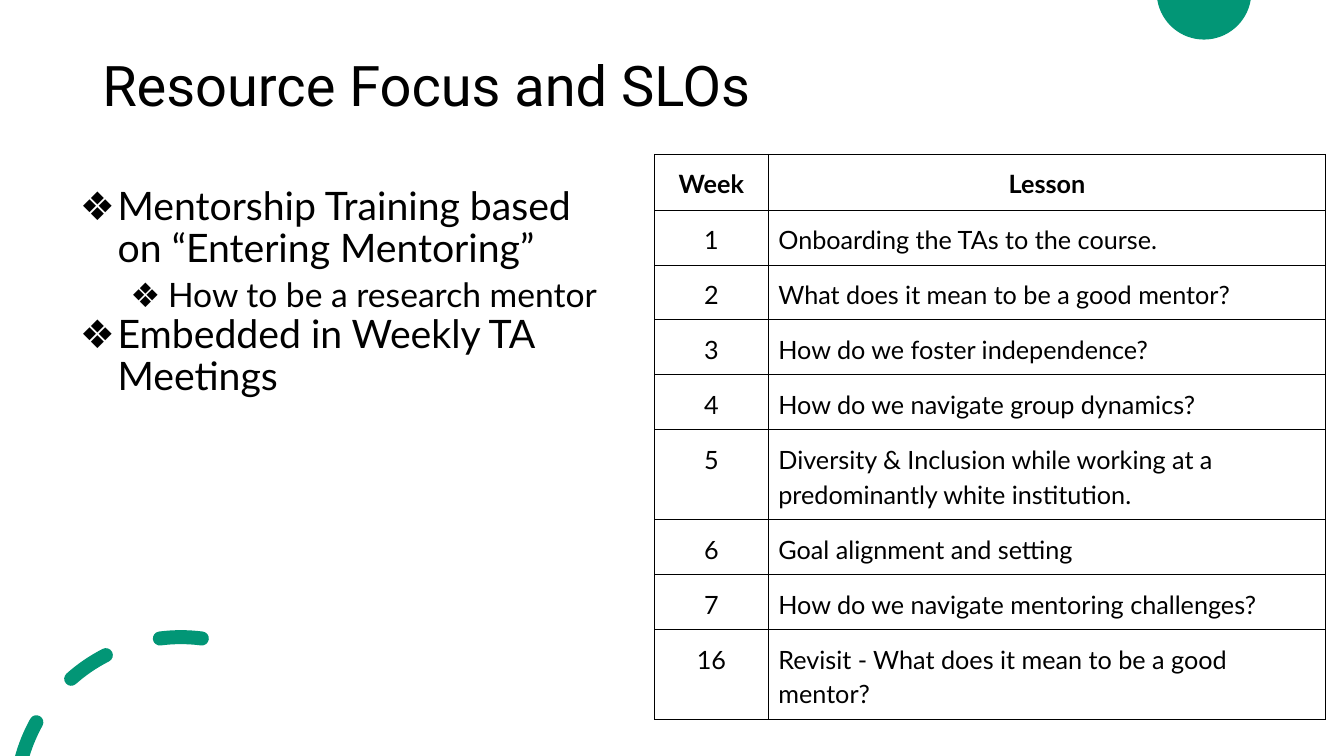
import math
from dataclasses import dataclass

from lxml import etree
from pptx import Presentation, util as u
from pptx.dml.color import RGBColor
from pptx.enum import text
from pptx.oxml import ns

GREEN, BLACK, WHITE = "029676", "000000", "FFFFFF"
SLIDE_WIDTH, SLIDE_HEIGHT = 960, 540
RING_CENTRE, OUTER_RADIUS, INNER_RADIUS = (129.2, 573.1), 123, 113
CAP_RADIUS = (OUTER_RADIUS - INNER_RADIUS) / 2
CELL_MARGIN = 7.2
ONE_LINE, TWO_LINES = 30.2, 47.5

Point = tuple[float, float]


@dataclass
class Bullet:
    wording: str
    size: float
    indent: float
    level: int = 0
    space_before: float = 0


@dataclass
class Row:
    week: str
    lesson: str
    height: float = ONE_LINE
    header: bool = False


BULLETS = [
    Bullet("Mentorship Training based on “Entering Mentoring”", 28, 36),
    Bullet("How to be a research mentor", 24, 72, level=1, space_before=5),
    Bullet("Embedded in Weekly TA Meetings", 28, 36),
]
ROWS = [
    Row("Week", "Lesson", 39.8, header=True),
    Row("1", "Onboarding the TAs to the course."),
    Row("2", "What does it mean to be a good mentor?"),
    Row("3", "How do we foster independence?"),
    Row("4", "How do we navigate group dynamics?"),
    Row("5", "Diversity & Inclusion while working at a predominantly white institution.",
        TWO_LINES),
    Row("6", "Goal alignment and setting"),
    Row("7", "How do we navigate mentoring challenges?"),
    Row("16", "Revisit - What does it mean to be a good mentor?", TWO_LINES),
]
# Start and end angle of each whole dash, in degrees anticlockwise from the right
WHOLE_DASHES = [(131.6, 117), (97.3, 82.7)]
CUT_DASH_END = 151


def colour(value: str) -> RGBColor:
    return RGBColor.from_string(value)


def set_font(paragraph, name: str, size: float, bold: bool = False) -> None:
    font = paragraph.font
    font.name, font.size, font.bold = name, u.Pt(size), bold
    font.color.rgb = colour(BLACK)


def polar(centre: Point, radius: float, angle: float) -> Point:
    turn = math.radians(angle)
    return centre[0] + radius * math.cos(turn), centre[1] - radius * math.sin(turn)


def arc(centre: Point, radius: float, start: float, end: float) -> list[Point]:
    """Return the start point and two Bezier triples; angles run anticlockwise."""
    step = (end - start) / 2
    reach = radius * 4 / 3 * math.tan(math.radians(step) / 4)
    points = [polar(centre, radius, start)]
    for angle in (start, start + step):
        corner = polar(centre, radius, angle + step)
        points += [polar(points[-1], reach, angle + 90),
                   polar(corner, -reach, angle + step + 90), corner]
    return points


def add_curved_shape(slide, contours: list[list[Point]]) -> None:
    """Draw contours, each a start point followed by Bezier triples, as one green shape."""
    builder = None
    for contour in contours:
        corners = [(u.Pt(x), u.Pt(y)) for x, y in contour]
        if builder is None:
            builder = slide.shapes.build_freeform(*corners[0])
        else:
            builder.move_to(*corners[0])
        builder.add_line_segments(corners[1:], close=True)
    shape = builder.convert_to_shape()
    segments = list(shape._element.iter(ns.qn("a:lnTo")))
    for index in range(0, len(segments), 3):
        curve = etree.Element(ns.qn("a:cubicBezTo"))
        segments[index].addprevious(curve)
        for segment in segments[index:index + 3]:
            curve.append(segment[0])
            segment.getparent().remove(segment)
    shape.shadow.inherit = False
    shape.fill.solid()
    shape.fill.fore_color.rgb = colour(GREEN)
    shape.line.fill.background()


def joined(*arcs: list[Point]) -> list[Point]:
    """Chain arcs that meet end to start."""
    return arcs[0] + [point for following in arcs[1:] for point in following[1:]]


def dash(start: float, end: float) -> list[Point]:
    middle = (OUTER_RADIUS + INNER_RADIUS) / 2
    return joined(
        arc(RING_CENTRE, OUTER_RADIUS, start, end),
        arc(polar(RING_CENTRE, middle, end), CAP_RADIUS, end, end - 180),
        arc(RING_CENTRE, INNER_RADIUS, end, start),
        arc(polar(RING_CENTRE, middle, start), CAP_RADIUS, start + 180, start),
    )


def cut_dash(end: float) -> list[Point]:
    """Return a dash that begins at the bottom edge of the slide."""
    middle = (OUTER_RADIUS + INNER_RADIUS) / 2
    depth = RING_CENTRE[1] - SLIDE_HEIGHT
    outer, inner = (180 - math.degrees(math.asin(depth / radius))
                    for radius in (OUTER_RADIUS, INNER_RADIUS))
    return joined(
        arc(RING_CENTRE, OUTER_RADIUS, outer, end),
        arc(polar(RING_CENTRE, middle, end), CAP_RADIUS, end, end - 180),
        arc(RING_CENTRE, INNER_RADIUS, end, inner),
    )


def add_text_frame(slide, left: float, top: float, width: float, height: float):
    box = slide.shapes.add_textbox(u.Pt(left), u.Pt(top), u.Pt(width), u.Pt(height))
    box.text_frame.word_wrap = True
    return box.text_frame


def add_title(slide) -> None:
    frame = add_text_frame(slide, 66, 10.8, 828, 104.4)
    frame.vertical_anchor = text.MSO_ANCHOR.MIDDLE
    paragraph = frame.paragraphs[0]
    paragraph.text = "Resource Focus and SLOs"
    paragraph.line_spacing = 0.9
    set_font(paragraph, "Roboto", 40)


def add_bullets(slide) -> None:
    frame = add_text_frame(slide, 41, 129.6, 411.8, 316)
    for index, bullet in enumerate(BULLETS):
        paragraph = frame.add_paragraph() if index else frame.paragraphs[0]
        paragraph.text = bullet.wording
        paragraph.level = bullet.level
        paragraph.line_spacing = 0.9
        paragraph.space_before = u.Pt(bullet.space_before)
        properties = paragraph._p.get_or_add_pPr()
        properties.set("marL", str(u.Pt(bullet.indent)))
        properties.set("indent", str(u.Pt(-27)))
        etree.SubElement(properties, ns.qn("a:buFont")).set("typeface", "Lato")
        etree.SubElement(properties, ns.qn("a:buChar")).set("char", "❖")
        set_font(paragraph, "Lato", bullet.size)


def add_borders(cell) -> None:
    properties = cell._tc.get_or_add_tcPr()
    for index, side in enumerate(("lnL", "lnR", "lnT", "lnB")):
        line = etree.Element(ns.qn(f"a:{side}"), w=str(u.Pt(0.75)))
        fill = etree.SubElement(line, ns.qn("a:solidFill"))
        etree.SubElement(fill, ns.qn("a:srgbClr")).set("val", BLACK)
        properties.insert(index, line)


def fill_cell(cell, wording: str, centred: bool, bold: bool) -> None:
    cell.margin_left = cell.margin_right = u.Pt(CELL_MARGIN)
    cell.margin_top = cell.margin_bottom = u.Pt(CELL_MARGIN)
    cell.fill.background()
    add_borders(cell)
    paragraph = cell.text_frame.paragraphs[0]
    paragraph.text = wording
    paragraph.line_spacing = 1.15
    paragraph.alignment = text.PP_ALIGN.CENTER if centred else text.PP_ALIGN.LEFT
    set_font(paragraph, "Lato", 18, bold)


def add_schedule(slide) -> None:
    widths, height = (81.3, 398.2), 403
    frame = slide.shapes.add_table(len(ROWS), len(widths), u.Pt(467.5), u.Pt(110.2),
                                   u.Pt(sum(widths)), u.Pt(height))
    table = frame.table
    table.first_row = table.horz_banding = False
    for column, width in zip(table.columns, widths):
        column.width = u.Pt(width)
    for index, row in enumerate(ROWS):
        table.rows[index].height = u.Pt(row.height)
        fill_cell(table.cell(index, 0), row.week, True, row.header)
        fill_cell(table.cell(index, 1), row.lesson, row.header, row.header)
    frame.height = u.Pt(height)


def main() -> None:
    presentation = Presentation()
    presentation.slide_width = u.Pt(SLIDE_WIDTH)
    presentation.slide_height = u.Pt(SLIDE_HEIGHT)
    slide = presentation.slides.add_slide(presentation.slide_layouts[6])
    add_curved_shape(slide, [arc((860, -5.5), 33.8, -9.4, -170.6)])
    add_curved_shape(slide, [cut_dash(CUT_DASH_END), *(dash(*ends) for ends in WHOLE_DASHES)])
    add_title(slide)
    add_bullets(slide)
    add_schedule(slide)
    presentation.save("out.pptx")


if __name__ == "__main__":
    main()
